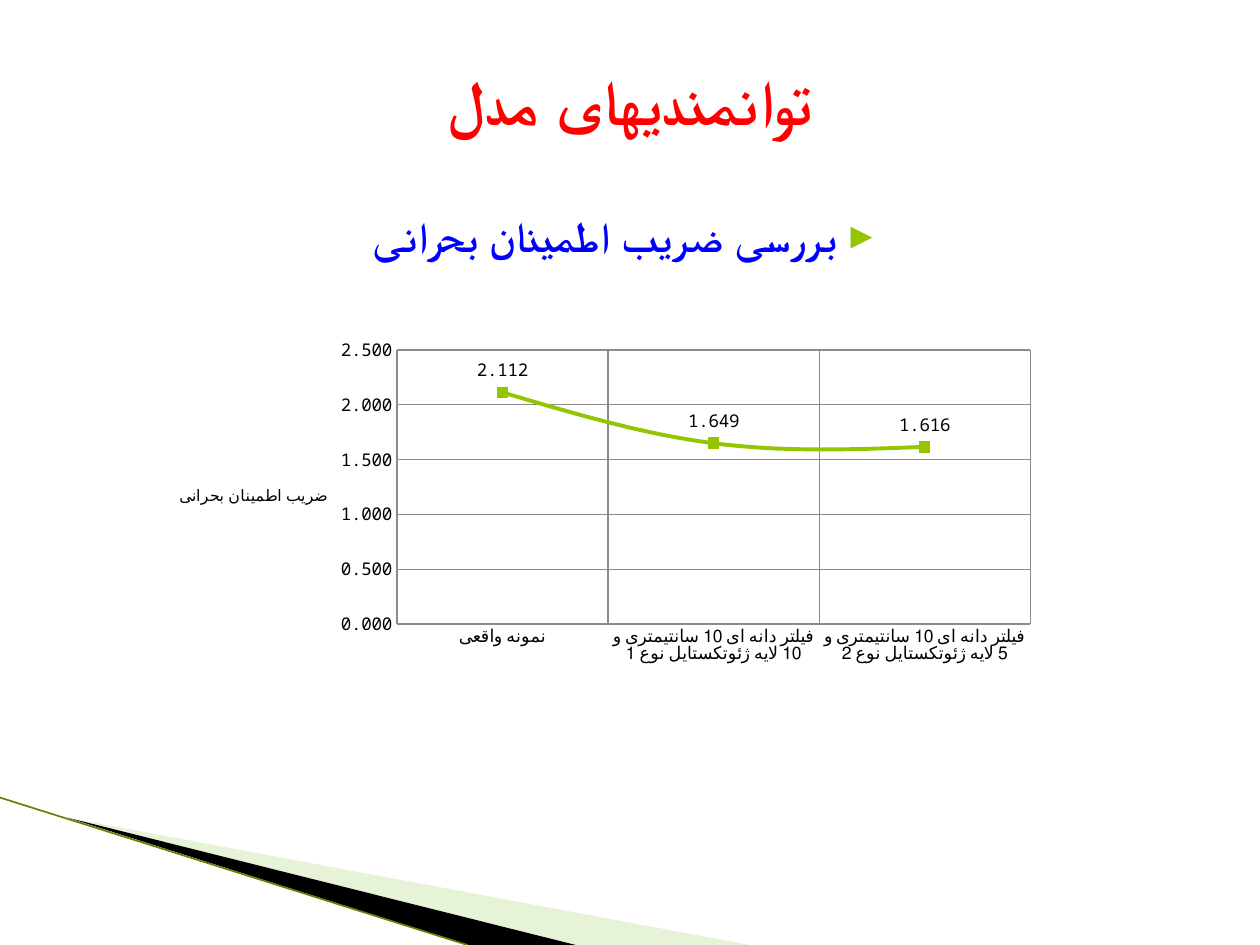
from lxml import etree
from pptx import Presentation
from pptx.chart.data import CategoryChartData
from pptx.dml.color import RGBColor
from pptx.enum.chart import XL_CHART_TYPE, XL_LABEL_POSITION, XL_MARKER_STYLE, XL_TICK_MARK
from pptx.enum.shapes import MSO_CONNECTOR
from pptx.enum.text import MSO_ANCHOR, PP_ALIGN
from pptx.oxml import parse_xml
from pptx.oxml.ns import nsdecls, qn
from pptx.util import Inches, Pt

LINE_MARKERS = XL_CHART_TYPE.LINE_MARKERS
ABOVE = XL_LABEL_POSITION.ABOVE
SQUARE = XL_MARKER_STYLE.SQUARE
NO_TICK = XL_TICK_MARK.NONE
STRAIGHT = MSO_CONNECTOR.STRAIGHT
CENTER = PP_ALIGN.CENTER
MIDDLE, TOP = MSO_ANCHOR.MIDDLE, MSO_ANCHOR.TOP

FONT = "Noto Sans Mono"
COLORS = {
    "title": "FF0000",
    "topic": "0000FF",
    "accent": "94C600",
    "pale": "C3E19D",
    "edge": "668000",
    "black": "000000",
    "grid": "8B8B8B",
}
SAFETY_FACTOR = "ضریب اطمینان بحرانی"
FACTORS = {
    "نمونه واقعی": 2.112,
    "فیلتر دانه ای 10 سانتیمتری و 10 لایه ژئوتکستایل نوع 1": 1.649,
    "فیلتر دانه ای 10 سانتیمتری و 5 لایه ژئوتکستایل نوع 2": 1.616,
}


def color(name):
    return RGBColor.from_string(COLORS[name])


def style_font(font, size, color_name, bold):
    font.name = FONT
    font.size = Pt(size)
    font.bold = bold
    font.color.rgb = color(color_name)


def add_run(paragraph, text, size, color_name, bold=True):
    run = paragraph.add_run()
    run.text = text
    style_font(run.font, size, color_name, bold)


def add_wedge(slide, points, color_name, opacity=100):
    start, *rest = [(Inches(x), Inches(y)) for x, y in points]
    builder = slide.shapes.build_freeform(*start)
    builder.add_line_segments(rest, close=True)
    wedge = builder.convert_to_shape()
    wedge.shadow.inherit = False
    wedge.fill.solid()
    wedge.fill.fore_color.rgb = color(color_name)
    wedge.line.fill.background()
    if opacity < 100:
        srgb = wedge.fill._xPr.find(".//" + qn("a:srgbClr"))
        etree.SubElement(srgb, qn("a:alpha"), val=str(opacity * 1000))


def add_corner(slide, left, top, bottom):
    """Wedges and edge line sweeping down from the left side."""
    tip = (left + 0.54, top + 0.16)
    add_wedge(slide, [tip, (left + 5.95, bottom), (left + 4.56, bottom)], "pale", 40)
    add_wedge(slide, [tip, (left + 4.57, bottom), (left + 3.72, bottom)], "black")
    edge = slide.shapes.add_connector(
        STRAIGHT, Inches(left), Inches(top), Inches(left + 3.71), Inches(bottom))
    edge.line.color.rgb = color("edge")
    edge.line.width = Pt(0.95)
    etree.SubElement(edge._element.spPr, qn("a:effectLst"))


def place_title(slide, left, top, width, height):
    title = slide.shapes.title
    title.left, title.top = Inches(left), Inches(top)
    title.width, title.height = Inches(width), Inches(height)
    frame = title.text_frame
    frame.vertical_anchor = MIDDLE
    heading = frame.paragraphs[0]
    heading.alignment = CENTER
    add_run(heading, "توانمندیهای مدل", 36, "title")


def add_topic(slide, left, top, width, height):
    """Right-to-left bullet line above the chart."""
    box = slide.shapes.add_textbox(Inches(left), Inches(top), Inches(width), Inches(height))
    frame = box.text_frame
    frame.word_wrap = True
    frame.vertical_anchor = TOP
    topic = frame.paragraphs[0]
    topic.alignment = CENTER
    props = topic._p.get_or_add_pPr()
    props.set("marL", str(Inches(0.4)))
    props.set("indent", str(Inches(-0.28)))
    props.set("rtl", "1")
    bullet_color = etree.SubElement(props, qn("a:buClr"))
    etree.SubElement(bullet_color, qn("a:srgbClr"), val=COLORS["accent"])
    etree.SubElement(props, qn("a:buSzPct"), val="68000")
    etree.SubElement(props, qn("a:buFont"), typeface="DejaVu Sans")
    etree.SubElement(props, qn("a:buChar"), char="▶")
    add_run(topic, "بررسی " + SAFETY_FACTOR, 24, "topic")


def manual_layout(x, y, w=None, h=None):
    inner = '<c:layoutTarget val="inner"/>' if w else ""
    sizes = f'<c:w val="{w}"/><c:h val="{h}"/>' if w else ""
    return parse_xml(
        f'<c:layout {nsdecls("c")}><c:manualLayout>{inner}'
        '<c:xMode val="edge"/><c:yMode val="edge"/>'
        f'<c:x val="{x}"/><c:y val="{y}"/>{sizes}</c:manualLayout></c:layout>')


def set_layout(parent, layout, position):
    for old in parent.findall(qn("c:layout")):
        parent.remove(old)
    parent.insert(position, layout)


def style_axis(axis):
    axis.major_tick_mark = axis.minor_tick_mark = NO_TICK
    axis.has_major_gridlines = True
    for line in (axis.major_gridlines.format.line, axis.format.line):
        line.color.rgb = color("grid")
        line.width = Pt(0.75)


def add_factor_chart(slide, left, top, width, height):
    data = CategoryChartData(number_format="0.000")
    data.categories = list(FACTORS)
    data.add_series(SAFETY_FACTOR, list(FACTORS.values()))
    chart = slide.shapes.add_chart(
        LINE_MARKERS, Inches(left), Inches(top), Inches(width), Inches(height), data).chart
    style_font(chart.font, 10, "black", False)
    chart.has_legend = False

    # Title sits left of the plot
    chart.has_title = True
    add_run(chart.chart_title.text_frame.paragraphs[0], SAFETY_FACTOR, 9, "black", False)
    chart.chart_title.include_in_layout = False
    set_layout(chart.chart_title._element, manual_layout(0.01, 0.41), 1)
    set_layout(chart._chartSpace.chart.plotArea,
               manual_layout(0.254, 0.122, 0.701, 0.593), 0)

    # Axes
    style_axis(chart.category_axis)
    values = chart.value_axis
    style_axis(values)
    values.minimum_scale, values.maximum_scale = 0, 2.5
    values.major_unit = 0.5
    values.tick_labels.number_format = "0.000"
    values.tick_labels.number_format_is_linked = False

    # Series and its labels
    plot = chart.plots[0]
    plot.vary_by_categories = False
    factors = plot.series[0]
    factors.smooth = True
    factors.format.line.color.rgb = color("accent")
    factors.format.line.width = Pt(2.25)
    factors.marker.style = SQUARE
    factors.marker.size = 6
    factors.marker.format.fill.solid()
    factors.marker.format.fill.fore_color.rgb = color("accent")
    factors.marker.format.line.color.rgb = color("accent")
    labels = factors.data_labels
    labels.show_value = True
    labels.position = ABOVE
    labels.number_format = "0.000"
    labels.number_format_is_linked = False
    style_font(labels.font, 10, "black", False)


def main():
    deck = Presentation()
    deck.slide_width, deck.slide_height = Inches(10), Inches(7.5)
    slide = deck.slides.add_slide(deck.slide_layouts[5])
    add_corner(slide, 0, 6.33, 7.5)
    add_topic(slide, 0.5, 1.62, 9, 4.95)
    place_title(slide, 0.5, 0.17, 9, 1.25)
    add_factor_chart(slide, 1.33, 2.33, 7.17, 3.67)
    deck.save("out.pptx")


if __name__ == "__main__":
    main()
